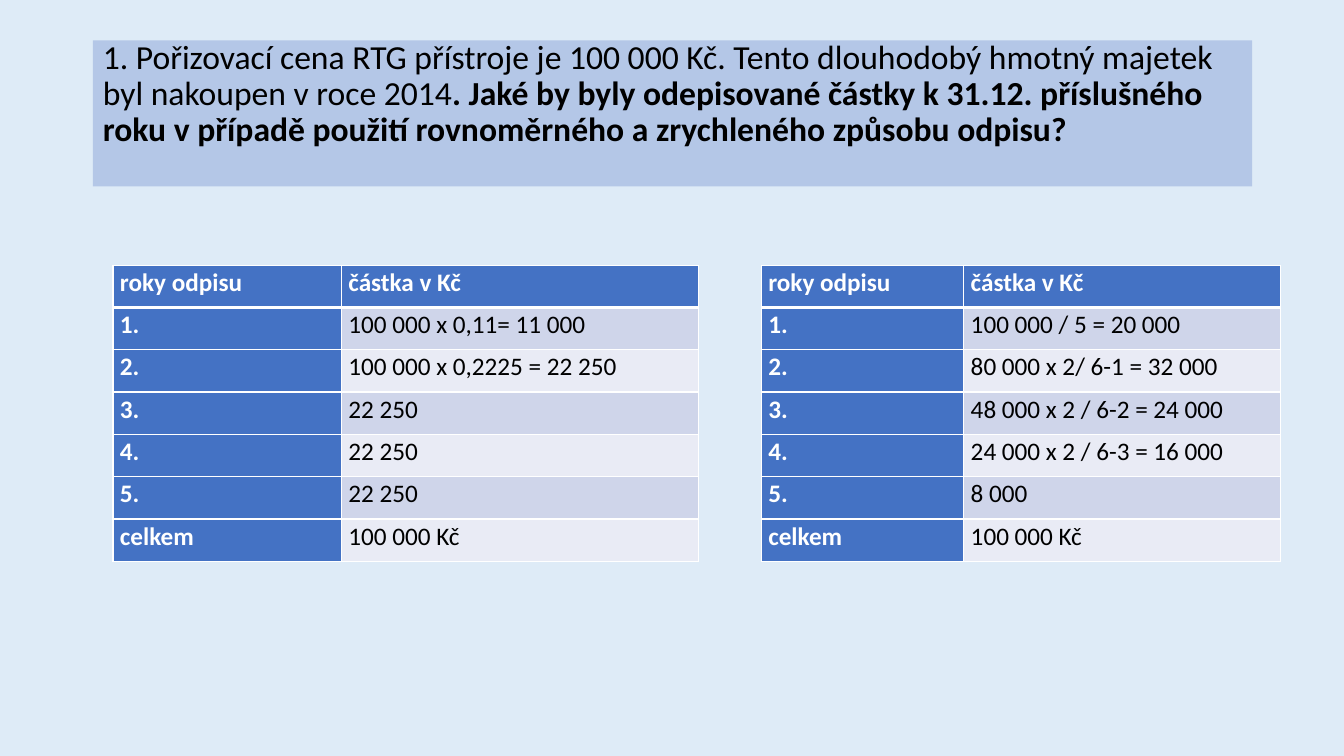
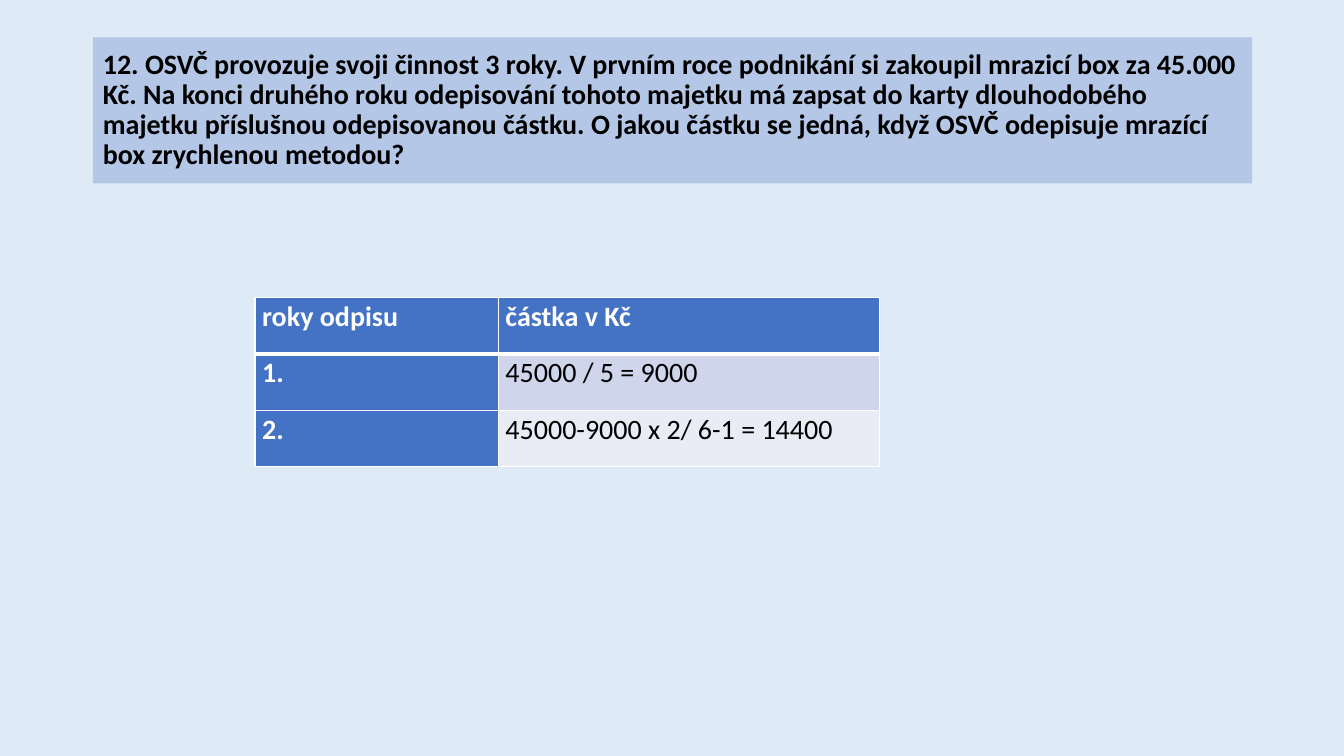
import dataclasses

import lxml.etree
import pptx
import pptx.dml.color
import pptx.enum.text
import pptx.oxml.ns
import pptx.util

Inches = pptx.util.Inches
Pt = pptx.util.Pt
Anchor = pptx.enum.text.MSO_ANCHOR


@dataclasses.dataclass(frozen=True)
class Theme:
    """Colours, font and type sizes shared by the slides."""

    font: str = "Calibri"
    background: str = "DEEBF7"
    question_band: str = "B4C7E7"
    heading: str = "4472C4"
    stripes: tuple = ("CFD5EA", "E9EBF5")
    light: str = "FFFFFF"
    dark: str = "000000"
    large: int = 24
    medium: int = 20
    small: int = 18
    thin: int = 1
    thick: int = 3


THEME = Theme()
HEADINGS = ("roky odpisu", "částka v Kč")
YEAR_SHARE = 0.39
STRAIGHT_LINE = (
    ("1.", "100 000 x 0,11= 11 000"),
    ("2.", "100 000 x 0,2225 = 22 250"),
    ("3.", "22 250"),
    ("4.", "22 250"),
    ("5.", "22 250"),
    ("celkem", "100 000 Kč"),
)
ACCELERATED = (
    ("1.", "100 000 / 5 = 20 000"),
    ("2.", "80 000 x 2/ 6-1 = 32 000"),
    ("3.", "48 000 x 2 / 6-2 = 24 000"),
    ("4.", "24 000 x 2 / 6-3 = 16 000"),
    ("5.", "8 000"),
    ("celkem", "100 000 Kč"),
)
FREEZER = (
    ("1.", "45000 / 5 = 9000"),
    ("2.", "45000-9000 x 2/ 6-1 = 14400"),
)
DEVICE_QUESTION = (
    ("1. Pořizovací cena RTG přístroje je 100 000 Kč. Tento dlouhodobý hmotný "
     "majetek byl nakoupen v roce 2014", False),
    (". Jaké by byly odepisované částky k 31.12. příslušného roku v případě "
     "použití rovnoměrného a zrychleného způsobu odpisu?", True),
)
FREEZER_QUESTION = (
    ("12. OSVČ provozuje svoji činnost 3 roky. V prvním roce podnikání si "
     "zakoupil mrazicí box za 45.000 Kč. Na konci druhého roku odepisování "
     "tohoto majetku má zapsat do karty dlouhodobého majetku příslušnou "
     "odepisovanou částku. O jakou částku se jedná, když OSVČ odepisuje "
     "mrazící box zrychlenou metodou?", True),
)


def rgb(value):
    """Turn a hex string into a colour."""
    return pptx.dml.color.RGBColor.from_string(value)


def paint(target, color):
    """Give a shape, cell or slide background a solid fill."""
    target.fill.solid()
    target.fill.fore_color.rgb = rgb(color)


def format_paragraph(paragraph, size, color, spacing, bold=None):
    """Set font and line spacing of a whole paragraph."""
    paragraph.alignment = pptx.enum.text.PP_ALIGN.LEFT
    paragraph.line_spacing = spacing
    font = paragraph.font
    font.name, font.size, font.bold = THEME.font, Pt(size), bold
    font.color.rgb = rgb(color)


def add_question(slide, runs, top, size, anchor, inset):
    """Fill the title band with the question."""
    question = slide.shapes.title
    question.left, question.top = Inches(0.92), Inches(top)
    question.width, question.height = Inches(11.5), Inches(1.45)
    paint(question, THEME.question_band)
    frame = question.text_frame
    frame.word_wrap = True
    frame.auto_size = pptx.enum.text.MSO_AUTO_SIZE.NONE
    frame.vertical_anchor = anchor
    frame.margin_top = Inches(inset)
    paragraph = frame.paragraphs[0]
    format_paragraph(paragraph, size, THEME.dark, 0.9)
    for text, bold in runs:
        run = paragraph.add_run()
        run.text, run.font.bold = text, bold


def add_border(cell, side, width):
    """Draw one side of a cell border."""
    qn = pptx.oxml.ns.qn
    line = lxml.etree.SubElement(
        cell._tc.get_or_add_tcPr(), qn(f"a:ln{side}"), w=str(Pt(width)))
    fill = lxml.etree.SubElement(line, qn("a:solidFill"))
    lxml.etree.SubElement(fill, qn("a:srgbClr"), val=THEME.light)


def fill_cell(cell, text, size, row, column):
    """Write and style a cell according to its place in the table."""
    heading = row == 0 or column == 0
    widths = {
        "L": THEME.thin,
        "R": THEME.thin,
        "T": THEME.thick if row == 1 else THEME.thin,
        "B": THEME.thick if row == 0 else THEME.thin,
    }
    for side, width in widths.items():
        add_border(cell, side, width)
    paint(cell, THEME.heading if heading else THEME.stripes[(row - 1) % 2])
    cell.margin_left = cell.margin_right = Inches(0.07)
    cell.margin_top = cell.margin_bottom = 0
    cell.text = text
    format_paragraph(cell.text_frame.paragraphs[0], size,
                     THEME.light if heading else THEME.dark, 1.07, heading)


def add_schedule(slide, entries, box, size):
    """Place a depreciation schedule in the given box."""
    rows = (HEADINGS, *entries)
    left, top, width, height = box
    schedule = slide.shapes.add_table(
        len(rows), len(HEADINGS), Inches(left), Inches(top),
        Inches(width), Inches(height)).table
    schedule.first_col = True
    for column, share in zip(schedule.columns, (YEAR_SHARE, 1 - YEAR_SHARE)):
        column.width = Inches(width * share)
    for row, texts in enumerate(rows):
        schedule.rows[row].height = Inches(height / len(rows))
        for column, text in enumerate(texts):
            fill_cell(schedule.cell(row, column), text, size, row, column)


def add_device_slide(deck):
    """Compare both depreciation methods for the device."""
    slide = deck.slides.add_slide(deck.slide_layouts[5])
    add_question(slide, DEVICE_QUESTION, 0.4, THEME.large, Anchor.TOP, 0)
    add_schedule(slide, STRAIGHT_LINE, (1.12, 2.63, 5.81, 2.94), THEME.small)
    add_schedule(slide, ACCELERATED, (7.55, 2.63, 5.15, 2.94), THEME.small)


def add_freezer_slide(deck):
    """Show the accelerated depreciation of the freezer."""
    slide = deck.slides.add_slide(deck.slide_layouts[5])
    add_question(slide, FREEZER_QUESTION, 0.37, THEME.medium, Anchor.MIDDLE, 0.05)
    add_schedule(slide, FREEZER, (2.53, 2.95, 6.19, 1.68), THEME.medium)


def main():
    """Build and save the deck."""
    deck = pptx.Presentation()
    deck.slide_width, deck.slide_height = Inches(13.33), Inches(7.5)
    paint(deck.slide_master.background, THEME.background)
    add_device_slide(deck)
    add_freezer_slide(deck)
    deck.save("out.pptx")


if __name__ == "__main__":
    main()
